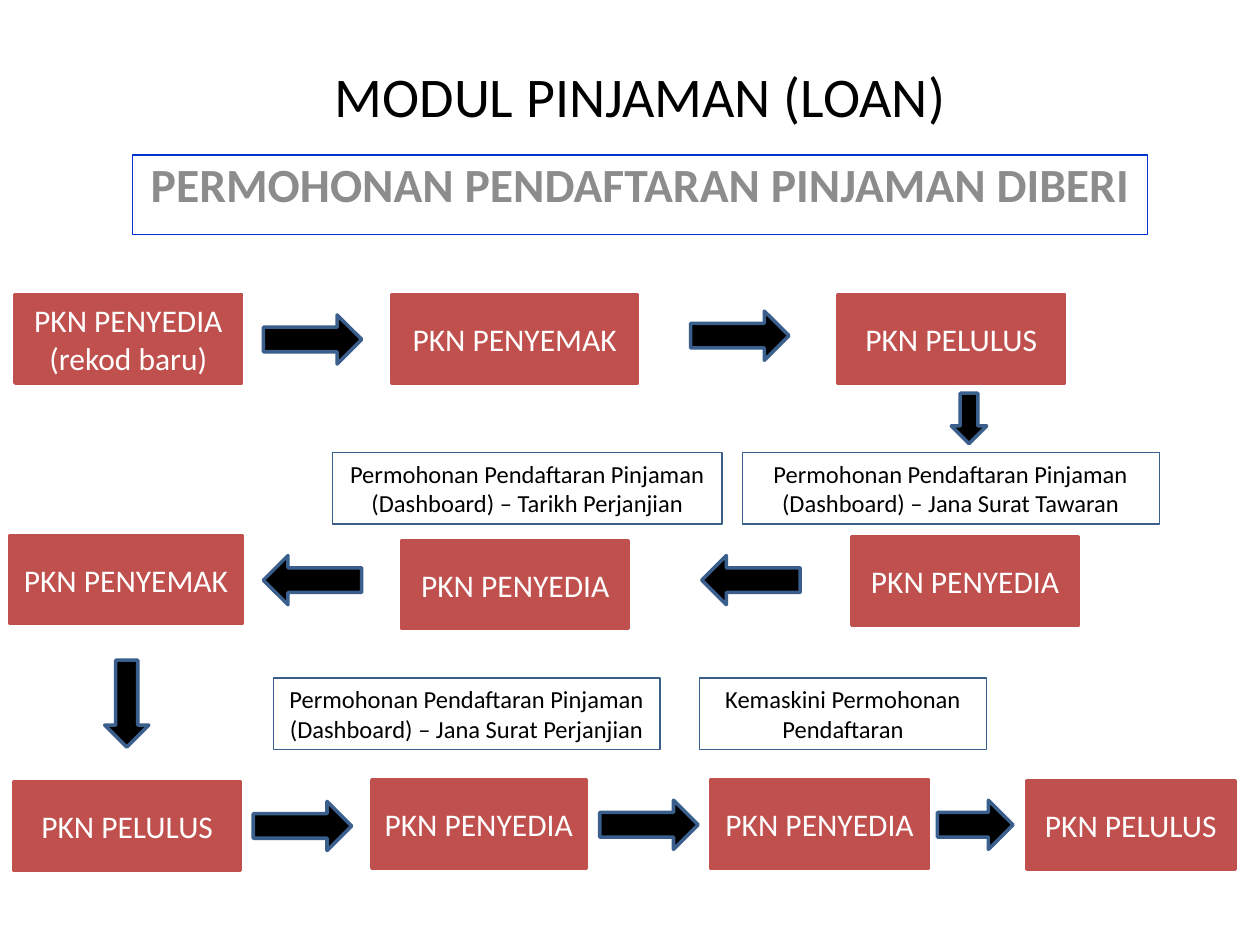
import pptx
import pptx.util
import pptx.dml.color
import pptx.enum.shapes
import pptx.enum.text
import pptx.oxml
import pptx.oxml.ns

Pt = pptx.util.Pt
SHAPES = pptx.enum.shapes.MSO_SHAPE
ANCHOR = pptx.enum.text.MSO_ANCHOR

# Theme: colours, type sizes and line widths
THEME = {
    "font": "Calibri",
    "black": "000000", "white": "FFFFFF", "grey": "8C8C8C",
    "red": "C0504D", "blue": "0033CC", "steel": "3A5F8C",
    "title": 32, "subtitle": 27.2, "step": 18, "note": 14,
    "thin": 0.75, "thick": 2,
}

# Content
TITLE = ("MODUL PINJAMAN (LOAN)", (139, 31.7, 453.6, 46.1))
SUBTITLE = ("PERMOHONAN PENDAFTARAN PINJAMAN DIBERI", (75.6, 88.6, 580.3, 45.4))

PREPARER, CHECKER, APPROVER = "PKN PENYEDIA", "PKN PENYEMAK", "PKN PELULUS"
STEP_HEIGHT = 50.4
STEPS = [  # lines, left, top, width
    ([PREPARER, "(rekod baru)"], 8.6, 168.5, 129.6),
    ([CHECKER], 223.9, 168.5, 140.4),
    ([APPROVER], 478.8, 168.5, 129.6),
    ([PREPARER], 486.7, 306.7, 129.6),
    ([PREPARER], 229.7, 308.9, 129.6),
    ([CHECKER], 5.8, 306, 132.5),
    ([APPROVER], 7.9, 447, 129.6),
    ([PREPARER], 212.4, 445.7, 122.4),
    ([PREPARER], 406.1, 445.7, 124.6),
    ([APPROVER], 586.8, 446.4, 118.8),
]

NOTE_HEIGHT = 41
BOARD = "Permohonan Pendaftaran Pinjaman (Dashboard) – "
NOTES = [  # text, left, top, width
    (BOARD + "Jana Surat Tawaran", 424.1, 258.5, 238.3),
    (BOARD + "Tarikh Perjanjian", 190.1, 258.5, 222.5),
    (BOARD + "Jana Surat Perjanjian", 156.2, 387.4, 221),
    ("Kemaskini Permohonan Pendaftaran", 399.6, 387.4, 164.2),
]

RIGHT, DOWN, LEFT = 0, 90, 180
LONG, SHORT = (56.2, 28.1), (43.2, 28.1)
ARROWS = [  # direction, centre x, centre y, (length, thickness)
    (RIGHT, 178.6, 194, LONG),
    (RIGHT, 422.7, 191.8, LONG),
    (DOWN, 553.7, 239.1, (28.8, 20.2)),
    (LEFT, 429.1, 331.5, LONG),
    (LEFT, 178.6, 331.5, LONG),
    (DOWN, 72.4, 402.1, (49.7, 25.2)),
    (RIGHT, 172.8, 472, LONG),
    (RIGHT, 370.8, 471.3, LONG),
    (RIGHT, 557.3, 471.3, SHORT),
]


def colour(name):
    return pptx.dml.color.RGBColor.from_string(THEME[name])


def write(box, lines, size, ink, anchor=ANCHOR.TOP, bold=False):
    frame = box.text_frame
    frame.word_wrap = True
    frame.vertical_anchor = anchor
    for index, line in enumerate(lines):
        para = frame.paragraphs[0] if index == 0 else frame.add_paragraph()
        para.alignment = pptx.enum.text.PP_ALIGN.CENTER
        span = para.add_run()
        span.text = line
        span.font.name = THEME["font"]
        span.font.size = Pt(THEME[size])
        span.font.bold = bold
        span.font.color.rgb = colour(ink)
    return frame


def add_box(page, kind, place, fill, line, weight):
    box = page.shapes.add_shape(kind, *map(Pt, place))
    box.shadow.inherit = False
    if fill:
        box.fill.solid()
        box.fill.fore_color.rgb = colour(fill)
    else:
        box.fill.background()
    box.line.color.rgb = colour(line)
    box.line.width = Pt(THEME[weight])
    if weight == "thick":  # rounded corners on the outline
        outline = box._element.spPr.find(pptx.oxml.ns.qn("a:ln"))
        outline.append(pptx.oxml.parse_xml(f'<a:round {pptx.oxml.ns.nsdecls("a")}/>'))
    return box


def main():
    deck = pptx.Presentation()
    deck.slide_width, deck.slide_height = Pt(720), Pt(540)
    page = deck.slides.add_slide(deck.slide_layouts[5])

    # Title and subtitle
    text, place = TITLE
    title = page.shapes.title
    title.left, title.top, title.width, title.height = map(Pt, place)
    write(title, [text], "title", "black").auto_size = pptx.enum.text.MSO_AUTO_SIZE.NONE

    text, place = SUBTITLE
    box = add_box(page, SHAPES.RECTANGLE, place, None, "blue", "thin")
    para = write(box, [text], "subtitle", "grey", bold=True).paragraphs[0]
    para.line_spacing = 0.9
    para.space_before = Pt(5.4)

    # Process steps
    for lines, left, top, width in STEPS:
        box = add_box(page, SHAPES.RECTANGLE, (left, top, width, STEP_HEIGHT),
                      "red", "red", "thick")
        write(box, lines, "step", "white", ANCHOR.MIDDLE)

    # Arrows between steps
    for direction, x, y, (length, thickness) in ARROWS:
        place = (x - length / 2, y - thickness / 2, length, thickness)
        arrow = add_box(page, SHAPES.RIGHT_ARROW, place, "black", "steel", "thick")
        arrow.rotation = direction

    # Notes above the steps
    for text, left, top, width in NOTES:
        box = add_box(page, SHAPES.RECTANGLE, (left, top, width, NOTE_HEIGHT),
                      None, "steel", "thin")
        write(box, [text], "note", "black")

    deck.save("out.pptx")


if __name__ == "__main__":
    main()
